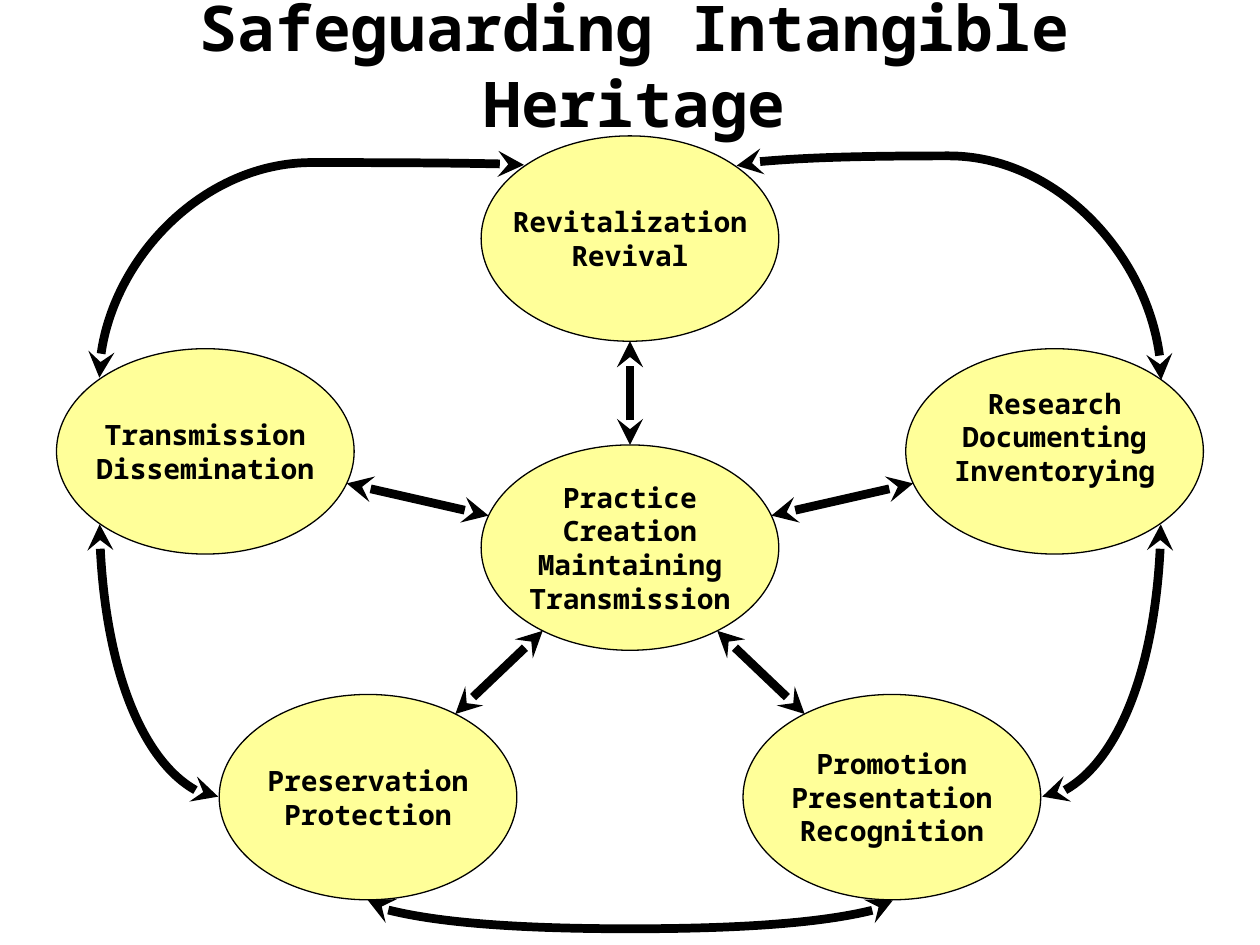
import math
from dataclasses import dataclass

import pptx
import pptx.dml.color
import pptx.enum.shapes
import pptx.enum.text
import pptx.util
from lxml import etree
from pptx.oxml.ns import qn
from pptx.util import Cm

FONT = "Noto Sans Mono"
BLACK = "000000"
YELLOW = "FFFF99"
WIDTH, HEIGHT = 6.0, 4.14
CENTER_X = 12.7
SIDE_SPREAD, LOWER_SPREAD = 8.56, 5.28
LEFT, BOTTOM_LEFT, BOTTOM, BOTTOM_RIGHT, RIGHT, TOP_RIGHT = range(2, 8)


@dataclass(frozen=True)
class Measure:
    words: tuple[str, ...]
    x: float
    y: float
    bottom_inset: float = 0


@dataclass(frozen=True)
class Arc:
    box: tuple[float, float, float, float]
    rotation: int
    preset: str
    flips: tuple[str, ...] = ()
    bend: int | None = None
    joints: tuple[tuple[Measure, int], ...] = ()


PRACTICE = Measure(("Practice", "Creation", "Maintaining", "Transmission"), CENTER_X, 11.04)
REVIVAL = Measure(("Revitalization", "Revival"), CENTER_X, 4.81)
TRANSMISSION = Measure(("Transmission", "Dissemination"), CENTER_X - SIDE_SPREAD, 9.1)
RESEARCH = Measure(("Research", "Documenting", "Inventorying"), CENTER_X + SIDE_SPREAD, 9.1, 0.6)
PRESERVATION = Measure(("Preservation", "Protection"), CENTER_X - LOWER_SPREAD, 16.07)
PROMOTION = Measure(("Promotion", "Presentation", "Recognition"), CENTER_X + LOWER_SPREAD, 16.07)
OUTER = (TRANSMISSION, PRESERVATION, PROMOTION, RESEARCH, REVIVAL)

ARCS = (
    Arc((12.7, 12.85, 0.01, 10.59), 270, "curvedConnector3", ("flipH",), 5840000,
        ((PRESERVATION, BOTTOM), (PROMOTION, BOTTOM))),
    Arc((19.46, 12.12, 5.49, 2.39), 90, "curvedConnector2",
        joints=((RESEARCH, BOTTOM_RIGHT), (PROMOTION, RIGHT))),
    Arc((16.97, 1.22, 4.32, 8.56), 90, "curvedConnector3", ("flipH",), 104600,
        ((RESEARCH, TOP_RIGHT), (REVIVAL, TOP_RIGHT))),
    Arc((4.14, 1.19, 4.29, 8.56), 270, "curvedConnector3", ("flipH", "flipV"), -1100),
    Arc((0.46, 12.12, 5.49, 2.39), 270, "curvedConnector2", ("flipH",),
        joints=((TRANSMISSION, BOTTOM_LEFT), (PRESERVATION, LEFT))),
)


def color(value: str) -> pptx.dml.color.RGBColor:
    return pptx.dml.color.RGBColor.from_string(value)


def write(frame, *lines: str, size: float, wrap: bool,
          insets: tuple[float, float, float, float] = (0, 0, 0, 0)) -> None:
    frame.auto_size = pptx.enum.text.MSO_AUTO_SIZE.NONE
    frame.word_wrap = wrap
    frame.vertical_anchor = pptx.enum.text.MSO_ANCHOR.MIDDLE
    frame.margin_left, frame.margin_top, frame.margin_right, frame.margin_bottom = map(Cm, insets)
    frame.text = "\n".join(lines)
    for paragraph in frame.paragraphs:
        paragraph.alignment = pptx.enum.text.PP_ALIGN.CENTER
        font = paragraph.runs[0].font
        font.name, font.size, font.bold = FONT, pptx.util.Pt(size), True
        font.color.rgb = color(BLACK)


def style_arrow(arrow) -> None:
    arrow.line.color.rgb = color(BLACK)
    arrow.line.width = pptx.util.Pt(5)
    outline = arrow._element.spPr.find(qn("a:ln"))
    for tip in ("a:headEnd", "a:tailEnd"):
        etree.SubElement(outline, qn(tip), type="stealth")
    etree.SubElement(arrow._element.spPr, qn("a:effectLst"))


def draw_measure(shapes, measure: Measure):
    oval = shapes.add_shape(pptx.enum.shapes.MSO_SHAPE.OVAL, Cm(measure.x - WIDTH / 2),
                            Cm(measure.y - HEIGHT / 2), Cm(WIDTH), Cm(HEIGHT))
    oval.shadow.inherit = False
    oval.fill.solid()
    oval.fill.fore_color.rgb = color(YELLOW)
    oval.line.color.rgb = color(BLACK)
    oval.line.width = pptx.util.Pt(0.75)
    write(oval.text_frame, *measure.words, size=16, wrap=False,
          insets=(0, 0, 0, measure.bottom_inset))
    return oval


def draw_spoke(shapes, hub: Measure, rim: Measure) -> None:
    dx, dy = rim.x - hub.x, rim.y - hub.y
    edge = 1 / math.hypot(dx / (WIDTH / 2), dy / (HEIGHT / 2))
    style_arrow(shapes.add_connector(
        pptx.enum.shapes.MSO_CONNECTOR.STRAIGHT,
        Cm(hub.x + dx * edge), Cm(hub.y + dy * edge),
        Cm(rim.x - dx * edge), Cm(rim.y - dy * edge)))


def draw_arc(shapes, arc: Arc, ovals: dict) -> None:
    left, top, width, height = map(Cm, arc.box)
    curve = shapes.add_connector(pptx.enum.shapes.MSO_CONNECTOR.CURVE,
                                 left, top, left + width, top + height)
    links = curve._element.find(".//" + qn("p:cNvCxnSpPr"))
    for tag, (measure, site) in zip(("a:stCxn", "a:endCxn"), arc.joints):
        etree.SubElement(links, qn(tag), id=str(ovals[measure].shape_id), idx=str(site))
    frame = curve._element.spPr.find(qn("a:xfrm"))
    frame.set("rot", str(arc.rotation * 60000))
    for flip in arc.flips:
        frame.set(flip, "1")
    geometry = curve._element.spPr.find(qn("a:prstGeom"))
    geometry.set("prst", arc.preset)
    if arc.bend is not None:
        guides = geometry.find(qn("a:avLst"))
        etree.SubElement(guides, qn("a:gd"), name="adj1", fmla=f"val {arc.bend}")
    style_arrow(curve)


def main() -> None:
    deck = pptx.Presentation()
    deck.slide_width, deck.slide_height = Cm(25.4), Cm(19.05)
    slide = deck.slides.add_slide(deck.slide_layouts[5])
    diagram = slide.shapes.add_group_shape().shapes
    ovals = {}
    for measure in OUTER:
        draw_spoke(diagram, PRACTICE, measure)
        ovals[measure] = draw_measure(diagram, measure)
    draw_measure(diagram, PRACTICE)
    for arc in ARCS:
        draw_arc(diagram, arc, ovals)

    heading = slide.shapes.title
    heading.left, heading.top, heading.width, heading.height = map(Cm, (2.11, -0.28, 21.36, 3.15))
    write(heading.text_frame, "Safeguarding Intangible Heritage", size=36, wrap=True,
          insets=(0.18, 0.08, 0.18, 0.08))
    deck.save("out.pptx")


if __name__ == "__main__":
    main()
